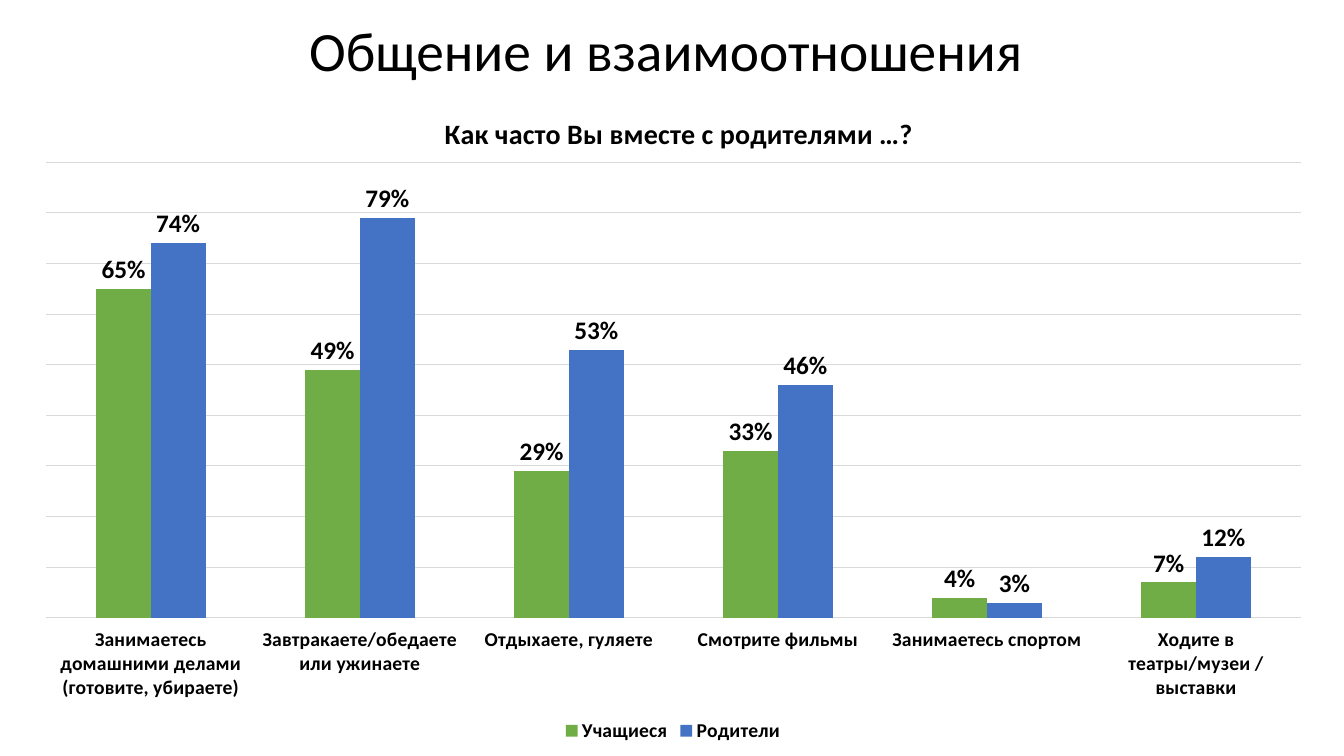
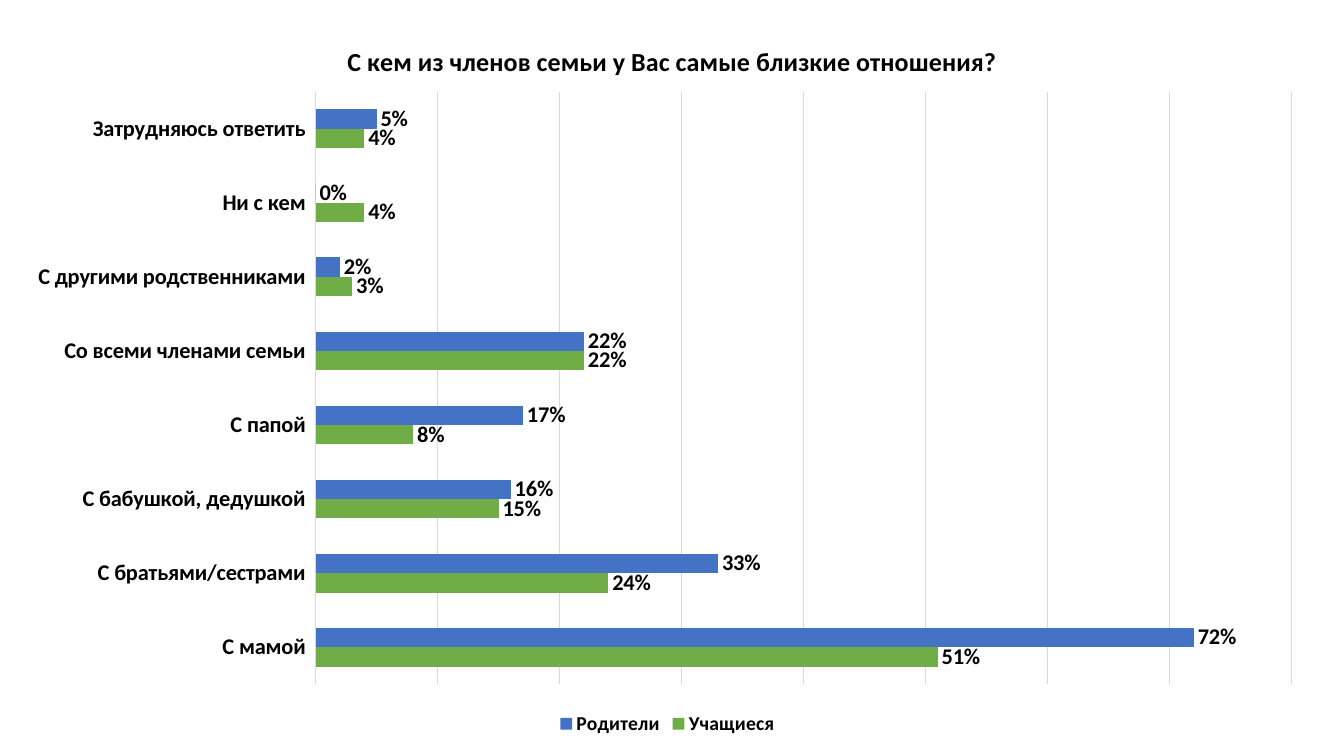
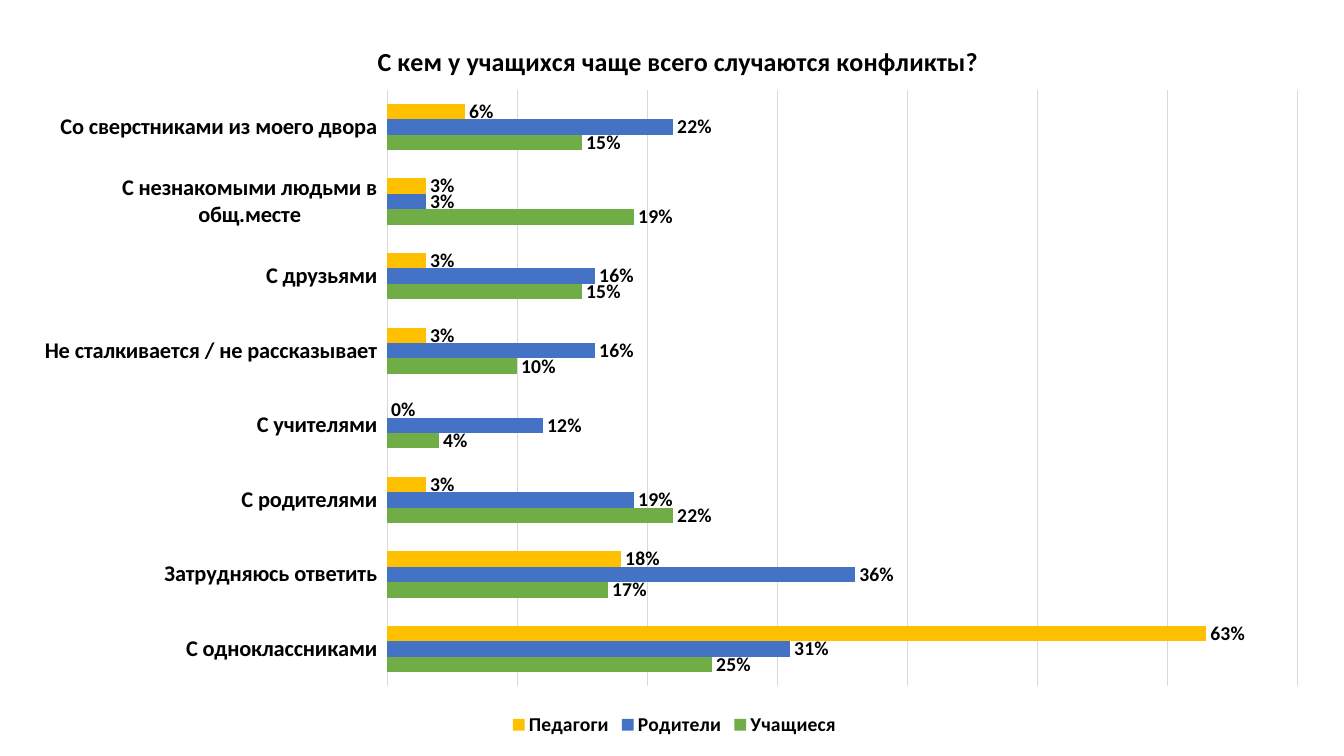
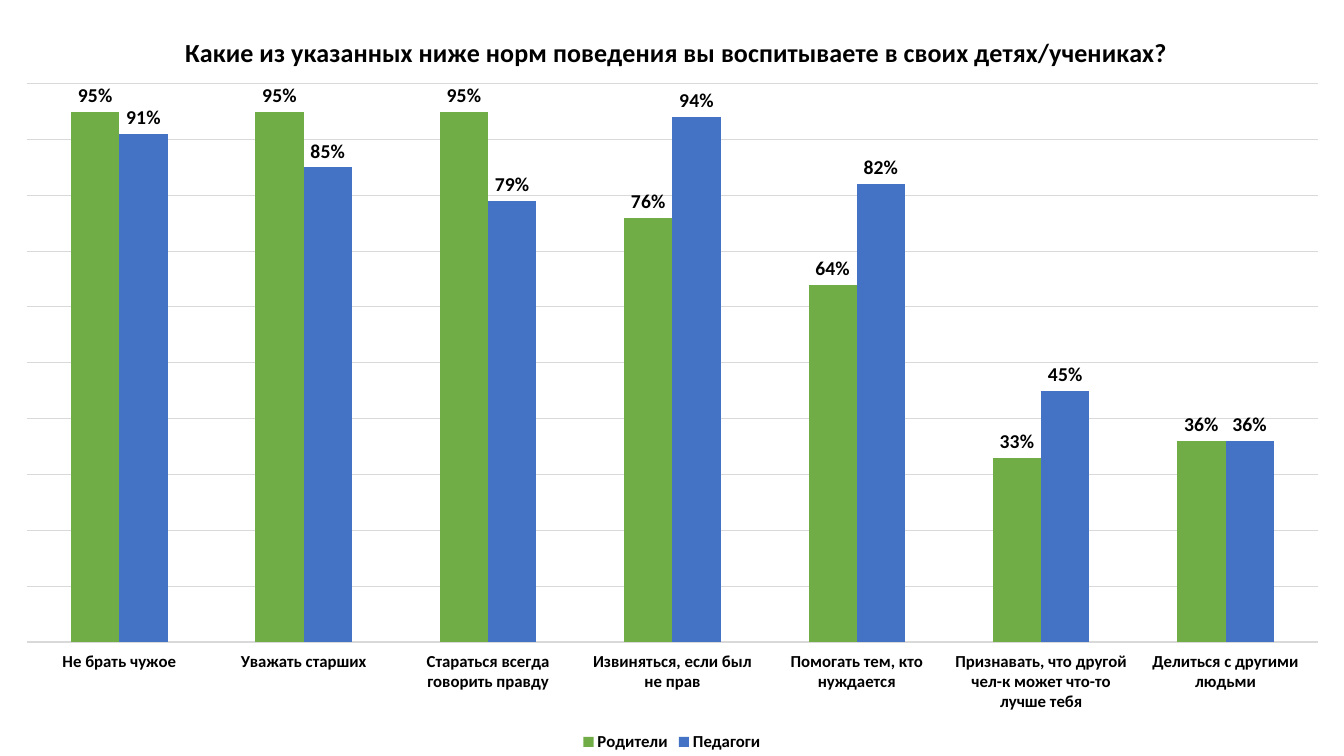
from dataclasses import dataclass
from typing import Any, NamedTuple

from lxml import etree
from pptx import Presentation
from pptx.chart.chart import Chart
from pptx.chart.data import CategoryChartData
from pptx.dml.color import RGBColor
from pptx.enum.chart import XL_CHART_TYPE as ChartType
from pptx.enum.chart import XL_LABEL_POSITION as LabelPosition
from pptx.enum.chart import XL_LEGEND_POSITION as LegendPosition
from pptx.enum.chart import XL_TICK_LABEL_POSITION as TickLabels
from pptx.enum.chart import XL_TICK_MARK as TickMark
from pptx.enum.text import MSO_ANCHOR as Anchor
from pptx.enum.text import PP_ALIGN as Align
from pptx.oxml.ns import qn
from pptx.util import Inches, Pt


@dataclass(frozen=True)
class Theme:
    font: str = "Calibri"
    text: str = "000000"
    grid: str = "D9D9D9"
    palette: tuple[str, ...] = ("70AD47", "4472C4", "FFC000")
    heading: float = 39.6
    base: float = 10
    hairline: float = 0.75
    percent: str = "0%"
    gap: int = 182


THEME = Theme()


class Box(NamedTuple):
    left: float
    top: float
    width: float
    height: float


class Point(NamedTuple):
    left: float
    top: float


class Sizes(NamedTuple):
    title: float
    categories: float
    labels: float
    legend: float


@dataclass(frozen=True)
class Survey:
    question: str
    kind: ChartType
    frame: Box
    plot: Box
    title_at: Point
    sizes: Sizes
    maximum: float
    categories: tuple[str, ...]
    answers: dict[str, tuple[float, ...]]
    heading: str = ""


SURVEYS = (
    Survey(
        heading="Общение и взаимоотношения",
        question="Как часто Вы вместе с родителями …?",
        kind=ChartType.COLUMN_CLUSTERED,
        frame=Box(0.2, 0.79, 12.95, 6.62),
        plot=Box(0.46, 1.61, 12.44, 4.52),
        title_at=Point(4.36, 1.08),
        sizes=Sizes(20, 14, 18, 14),
        maximum=0.9,
        categories=(
            "Занимаетесь домашними делами (готовите, убираете)",
            "Завтракаете/обедаете или ужинаете",
            "Отдыхаете, гуляете",
            "Смотрите фильмы",
            "Занимаетесь спортом",
            "Ходите в театры/музеи / выставки",
        ),
        answers={
            "Учащиеся": (0.65, 0.49, 0.29, 0.33, 0.04, 0.07),
            "Родители": (0.74, 0.79, 0.53, 0.46, 0.03, 0.12),
        },
    ),
    Survey(
        question="С кем из членов семьи у Вас самые близкие отношения?",
        kind=ChartType.BAR_CLUSTERED,
        frame=Box(0.18, 0.1, 12.88, 7.24),
        plot=Box(3.13, 0.91, 9.68, 5.88),
        title_at=Point(3.4, 0.38),
        sizes=Sizes(18.6, 16, 16, 14),
        maximum=0.8,
        categories=(
            "С мамой",
            "С братьями/сестрами",
            "С бабушкой, дедушкой",
            "С папой",
            "Со всеми членами семьи",
            "С другими родственниками",
            "Ни с кем",
            "Затрудняюсь ответить",
        ),
        answers={
            "Учащиеся": (0.51, 0.24, 0.15, 0.08, 0.22, 0.03, 0.04, 0.04),
            "Родители": (0.72, 0.33, 0.16, 0.17, 0.22, 0.02, 0, 0.05),
        },
    ),
    Survey(
        question="С кем у учащихся чаще всего случаются конфликты?",
        kind=ChartType.BAR_CLUSTERED,
        frame=Box(0.25, 0.12, 12.88, 7.23),
        plot=Box(3.84, 0.89, 9.03, 5.92),
        title_at=Point(3.7, 0.38),
        sizes=Sizes(18.6, 16, 14, 14),
        maximum=0.7,
        categories=(
            "С одноклассниками",
            "Затрудняюсь ответить",
            "С родителями",
            "С учителями",
            "Не сталкивается / не рассказывает",
            "С друзьями",
            "С незнакомыми людьми в общ.месте",
            "Со сверстниками из моего двора",
        ),
        answers={
            "Учащиеся": (0.25, 0.17, 0.22, 0.04, 0.1, 0.15, 0.19, 0.15),
            "Родители": (0.31, 0.36, 0.19, 0.12, 0.16, 0.16, 0.03, 0.22),
            "Педагоги": (0.63, 0.18, 0.03, 0, 0.03, 0.03, 0.03, 0.06),
        },
    ),
    Survey(
        question="Какие из указанных ниже норм поведения вы воспитываете "
        "в своих детях/учениках?",
        kind=ChartType.COLUMN_CLUSTERED,
        frame=Box(0, 0, 13.33, 7.5),
        plot=Box(0.27, 0.83, 12.8, 5.54),
        title_at=Point(1.79, 0.29),
        sizes=Sizes(18.6, 12, 14, 12),
        maximum=1,
        categories=(
            "Не брать чужое",
            "Уважать старших",
            "Стараться всегда говорить правду",
            "Извиняться, если был не прав",
            "Помогать тем, кто нуждается",
            "Признавать, что другой чел-к может что-то лучше тебя",
            "Делиться с другими людьми",
        ),
        answers={
            "Родители": (0.95, 0.95, 0.95, 0.76, 0.64, 0.33, 0.36),
            "Педагоги": (0.91, 0.85, 0.79, 0.94, 0.82, 0.45, 0.36),
        },
    ),
)


def assign(target: Any, values: dict[str, Any]) -> None:
    for name, value in values.items():
        setattr(target, name, value)


def style_font(font: Any, size: float, bold: bool = True) -> None:
    assign(font, {"name": THEME.font, "size": Pt(size), "bold": bold})
    font.color.rgb = RGBColor.from_string(THEME.text)


def style_line(line: Any) -> None:
    line.color.rgb = RGBColor.from_string(THEME.grid)
    line.width = Pt(THEME.hairline)


def place(parent: Any, index: int, values: dict[str, Any]) -> None:
    for old in parent.findall(qn("c:layout")):
        parent.remove(old)
    layout = etree.Element(qn("c:layout"))
    manual = etree.SubElement(layout, qn("c:manualLayout"))
    for tag, value in values.items():
        etree.SubElement(manual, qn(f"c:{tag}")).set("val", str(value))
    parent.insert(index, layout)


def arrange(chart: Chart, survey: Survey) -> None:
    frame, plot, title = survey.frame, survey.plot, survey.title_at
    edges = {"xMode": "edge", "yMode": "edge"}
    place(chart.chart_title.element, 1, {
        **edges,
        "x": (title.left - frame.left) / frame.width,
        "y": (title.top - frame.top) / frame.height,
    })
    place(chart.element.find(".//" + qn("c:plotArea")), 0, {
        "layoutTarget": "inner",
        **edges,
        "x": (plot.left - frame.left) / frame.width,
        "y": (plot.top - frame.top) / frame.height,
        "w": plot.width / frame.width,
        "h": plot.height / frame.height,
    })


def style_axes(chart: Chart, survey: Survey) -> None:
    category = chart.category_axis
    assign(category, {
        "major_tick_mark": TickMark.NONE,
        "minor_tick_mark": TickMark.NONE,
        "tick_label_position": TickLabels.LOW,
        "has_major_gridlines": False,
    })
    style_line(category.format.line)
    style_font(category.tick_labels.font, survey.sizes.categories)

    value = chart.value_axis
    assign(value, {
        "minimum_scale": 0,
        "maximum_scale": survey.maximum,
        "major_unit": 0.1,
        "has_major_gridlines": True,
        "visible": False,
    })
    style_line(value.major_gridlines.format.line)


def style_plot(chart: Chart, survey: Survey) -> None:
    plot = chart.plots[0]
    assign(plot, {
        "gap_width": THEME.gap,
        "overlap": 0,
        "vary_by_categories": False,
        "has_data_labels": True,
    })
    for series, color in zip(plot.series, THEME.palette):
        series.format.fill.solid()
        series.format.fill.fore_color.rgb = RGBColor.from_string(color)
        series.format.line.fill.background()
    assign(plot.data_labels, {
        "show_value": True,
        "position": LabelPosition.OUTSIDE_END,
        "number_format": THEME.percent,
        "number_format_is_linked": False,
    })
    style_font(plot.data_labels.font, survey.sizes.labels)


def draw_chart(page: Any, survey: Survey) -> None:
    data = CategoryChartData(number_format=THEME.percent)
    data.categories = survey.categories
    for name, values in survey.answers.items():
        data.add_series(name, values)
    chart = page.shapes.add_chart(
        survey.kind, *map(Inches, survey.frame), data
    ).chart
    style_font(chart.font, THEME.base, bold=False)

    assign(chart, {"has_title": True, "has_legend": True})
    para = chart.chart_title.text_frame.paragraphs[0]
    span = para.add_run()
    span.text = survey.question
    style_font(span.font, survey.sizes.title)

    assign(chart.legend, {
        "position": LegendPosition.BOTTOM,
        "include_in_layout": False,
    })
    style_font(chart.legend.font, survey.sizes.legend)
    style_axes(chart, survey)
    style_plot(chart, survey)
    arrange(chart, survey)


def draw_heading(page: Any, heading: str) -> None:
    box = page.shapes.title
    names = ("left", "top", "width", "height")
    assign(box, dict(zip(names, map(Inches, (0.89, 0.35, 11.43, 0.36)))))
    box.text_frame.text = heading
    assign(box.text_frame, {"vertical_anchor": Anchor.MIDDLE, "word_wrap": True})
    para = box.text_frame.paragraphs[0]
    assign(para, {"alignment": Align.CENTER, "line_spacing": 0.9})
    style_font(para.runs[0].font, THEME.heading, bold=False)


def main() -> None:
    deck = Presentation()
    assign(deck, {"slide_width": Inches(13.33), "slide_height": Inches(7.5)})
    title_only = deck.slide_layouts.get_by_name("Title Only")
    blank = deck.slide_layouts.get_by_name("Blank")
    for survey in SURVEYS:
        page = deck.slides.add_slide(title_only if survey.heading else blank)
        if survey.heading:
            draw_heading(page, survey.heading)
        draw_chart(page, survey)
    deck.save("out.pptx")


if __name__ == "__main__":
    main()
